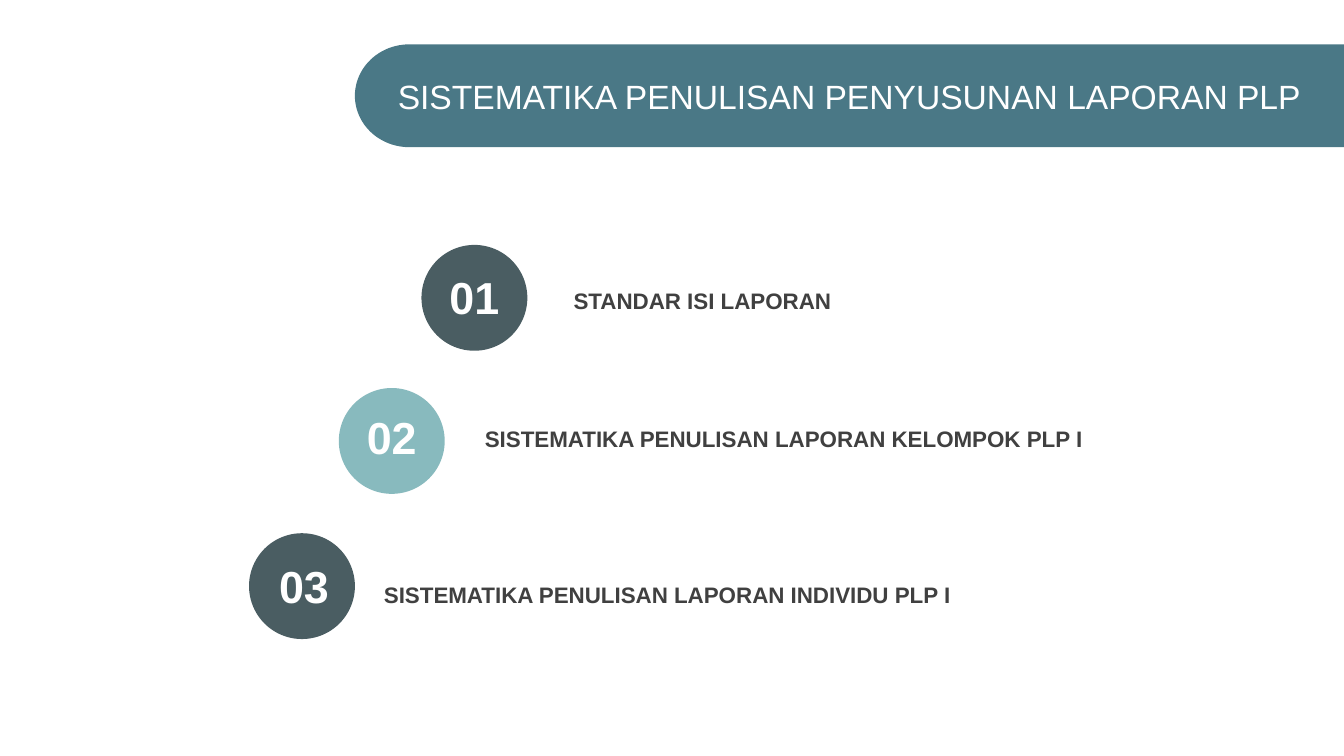
import math
import pptx
import pptx.util
import pptx.dml.color
import pptx.enum.shapes
import pptx.enum.text

WIDE, HIGH = pptx.util.Inches(13.33), pptx.util.Inches(7.5)
ALIGN = pptx.enum.text.PP_ALIGN
HEAD = {"size": pptx.util.Pt(24), "bold": False}
COUNT = {"size": pptx.util.Pt(32), "bold": True}
LABEL = {"size": pptx.util.Pt(16), "bold": True}


def color(text):
    """Turn a hex string into a colour."""
    return pptx.dml.color.RGBColor.from_string(text)


def place(x, y, w, h):
    """Turn percent shares of the slide into lengths."""
    return [round(part * side / 100)
            for part, side in ((x, WIDE), (y, HIGH), (w, WIDE), (h, HIGH))]


def paint(shape, fill):
    """Give a shape a flat fill without line or shadow."""
    shape.shadow.inherit = False
    shape.fill.solid()
    shape.fill.fore_color.rgb = color(fill)
    shape.line.fill.background()


def write(shape, text, style, ink, align):
    """Set one line of styled text in a shape."""
    frame = shape.text_frame
    frame.word_wrap = True
    frame.vertical_anchor = pptx.enum.text.MSO_ANCHOR.MIDDLE
    para = frame.paragraphs[0]
    para.alignment = align
    run = para.add_run()
    run.text = text
    for key, value in {"name": "Arial", **style}.items():
        setattr(run.font, key, value)
    run.font.color.rgb = color(ink)


def add_text(slide, box, text, style, ink, align):
    """Add a text box that grows with its text."""
    shape = slide.shapes.add_textbox(*place(*box))
    write(shape, text, style, ink, align)
    shape.text_frame.auto_size = pptx.enum.text.MSO_AUTO_SIZE.SHAPE_TO_FIT_TEXT


def add_banner(slide, box, text):
    """Draw the title band with its round left end."""
    x, y, w, h = place(*box)
    bend, half, steps = w * 0.055, h / 2, 48
    arc = []
    for step in range(steps + 1):
        turn = math.pi * (0.5 + step / steps)
        arc.append((round(x + bend * (1 + math.cos(turn))),
                    round(y + half * (1 + math.sin(turn)))))
    pen = slide.shapes.build_freeform(x + w, y, scale=1.0)
    pen.add_line_segments([(x + w, y + h)] + arc, close=True)
    band = pen.convert_to_shape()
    paint(band, "4A7886")
    write(band, text, HEAD, "FFFFFF", ALIGN.CENTER)


def add_item(slide, box, fill, count, label, shift, drop, gap, fall):
    """Draw a numbered disc and the label to its right."""
    x, y, w, h = box
    disc = slide.shapes.add_shape(pptx.enum.shapes.MSO_SHAPE.OVAL, *place(*box))
    paint(disc, fill)
    add_text(slide, (x + shift, y + drop, w, 8.53), count, COUNT, "FFFFFF", ALIGN.CENTER)
    add_text(slide, (x + gap, y + fall, 50.41, 4.93), label, LABEL, "404040", ALIGN.LEFT)


def main():
    """Build and save the slide."""
    deck = pptx.Presentation()
    deck.slide_width, deck.slide_height = WIDE, HIGH
    slide = deck.slides.add_slide(deck.slide_layouts[6])
    add_banner(slide, (26.41, 5.87, 73.59, 13.6),
               "SISTEMATIKA PENULISAN PENYUSUNAN LAPORAN PLP")
    items = [
        (31.36, 32.4, "4A5D62", "STANDAR ISI LAPORAN", 0, 2.53, 10.58, 4.93),
        (25.21, 51.33, "88BABE", "SISTEMATIKA PENULISAN LAPORAN KELOMPOK PLP I",
         0, 2.13, 10.13, 4.27),
        (18.53, 70.53, "4A5D62", "SISTEMATIKA PENULISAN LAPORAN INDIVIDU PLP I",
         0.15, 2.67, 9.3, 5.6),
    ]
    for rank, (x, y, fill, label, *moves) in enumerate(items, 1):
        add_item(slide, (x, y, 7.88, 14), fill, f"{rank:02}", label, *moves)
    deck.save("out.pptx")


if __name__ == "__main__":
    main()
